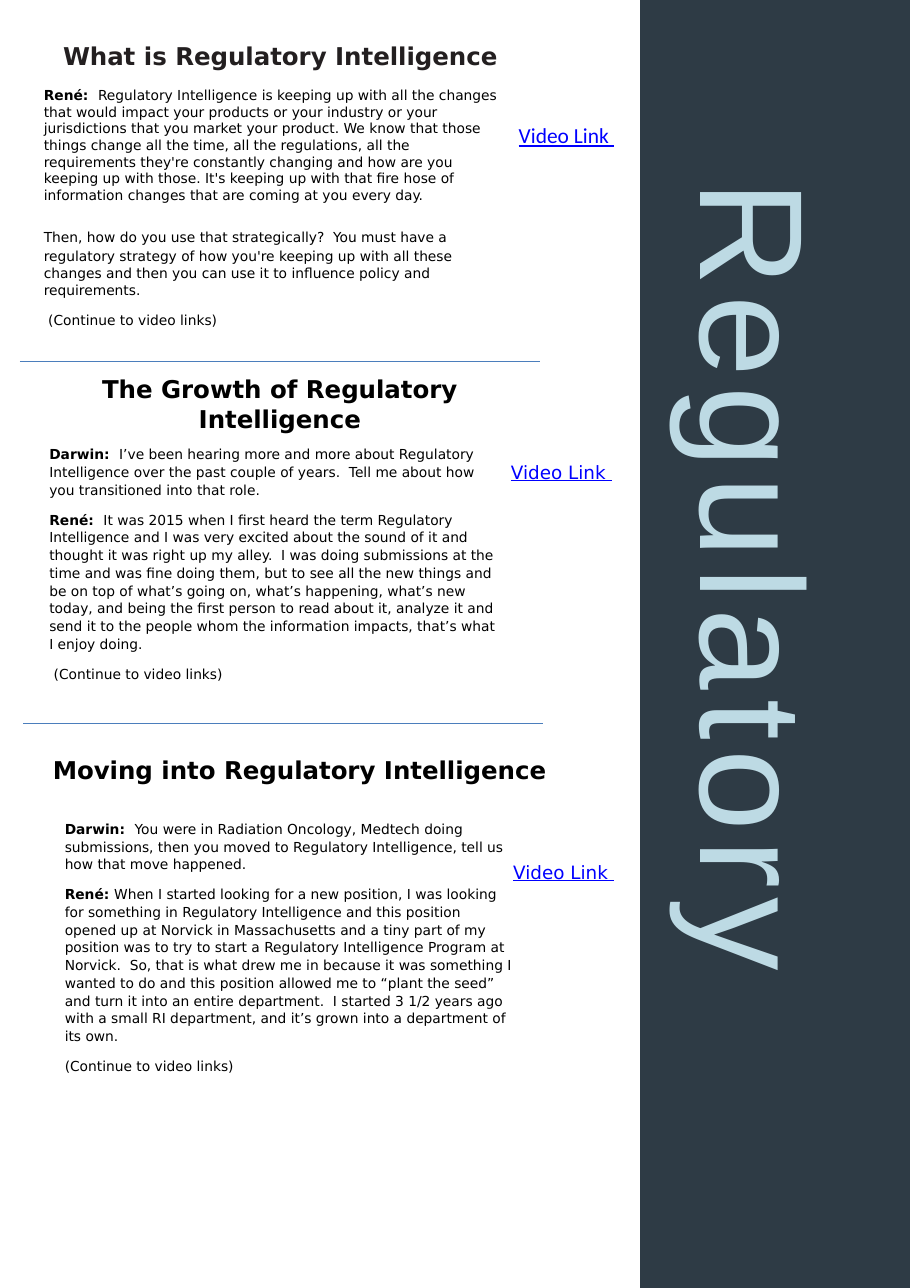
import pptx
import pptx.util
import pptx.dml.color
import pptx.enum.shapes
import pptx.enum.text
from dataclasses import dataclass

Pt = pptx.util.Pt
Align = pptx.enum.text.PP_ALIGN


@dataclass(frozen=True)
class Theme:
    font: str = "DejaVu Sans"
    side_font: str = "Arial"
    ink: str = "000000"
    dark: str = "231F20"
    band: str = "2E3B45"
    pale: str = "BDDAE4"
    link: str = "0000FF"
    rule: str = "4B7EBC"
    title: int = 16
    body: int = 9
    gap: int = 18
    side: int = 96


THEME = Theme()
WIDE, HIGH = pptx.util.Inches(8.26), pptx.util.Inches(11.69)
PANEL = 70.34  # width of the article column, percent of the slide
ROW = 28.1     # height of an article, percent of the slide


def color(code):
    return pptx.dml.color.RGBColor.from_string(code)


def inside(box, part):
    """Turn percent shares of a box into a box on the slide."""
    x, y, w, h = box
    left, top, width, height = (n / 100 for n in part)
    return [round(n) for n in (x + w * left, y + h * top, w * width, h * height)]


def style(para, size, code, font=THEME.font, bold=None):
    para.font.size, para.font.name = Pt(size), font
    para.font.bold = bold
    para.font.color.rgb = color(code)


def frame(slide, box, inset=None):
    text = slide.shapes.add_textbox(*box).text_frame
    text.word_wrap = True
    if inset is not None:
        text.margin_left = text.margin_right = inset
        text.margin_top = text.margin_bottom = inset
    return text


def heading(slide, box, words, code=THEME.ink, inset=None, lead=None):
    para = frame(slide, box, inset).paragraphs[0]
    para.text = words
    para.alignment = Align.CENTER
    para.line_spacing = lead
    style(para, THEME.title, code, bold=True)


def speech(slide, box, talk):
    """Each paragraph is its line spacing, the speaker and the runs."""
    text = frame(slide, box)
    for i, (lead, name, *parts) in enumerate(talk):
        para = text.add_paragraph() if i else text.paragraphs[0]
        para.line_spacing, para.space_after = lead, Pt(8)
        style(para, THEME.body, THEME.ink)
        if name:
            run = para.add_run()
            run.text, run.font.bold = name, True
        for part in parts:
            run = para.add_run()
            run.text = part
            if part == " ":
                run.font.size = Pt(THEME.gap)


def video(slide, box, size, font):
    para = frame(slide, box).paragraphs[0]
    para.text = "Video Link "
    style(para, size, THEME.link, font)
    para.font.underline = True


def divider(slide, box, start, end):
    x, y, w, _ = inside(box, (start, 0, end - start, 0))
    line = slide.shapes.add_connector(
        pptx.enum.shapes.MSO_CONNECTOR.STRAIGHT, x, y, x + w, y)
    line.line.color.rgb, line.line.width = color(THEME.rule), Pt(0.75)
    props = line._element.spPr
    props.append(props.makeelement(pptx.oxml.ns.qn("a:effectLst"), {}))


def article(slide, box, item):
    if "rule" in item:
        divider(slide, box, *item["rule"])
    heading(slide, inside(box, item["head"]), item["title"], **item.get("look", {}))
    speech(slide, inside(box, item["body"]), item["talk"])
    video(slide, inside(box, item["link"]), *item.get("face", (12, THEME.font)))


def sidebar(slide, box):
    band = slide.shapes.add_shape(pptx.enum.shapes.MSO_SHAPE.RECTANGLE, *box)
    band.shadow.inherit = False
    band.fill.solid()
    band.fill.fore_color.rgb = color(THEME.band)
    band.line.fill.background()
    # Word reading downwards
    text = frame(slide, inside(box, (19.1, 14.03, 74.39, 72.03)), 0)
    text._txBody.bodyPr.set("vert", "vert")
    para = text.paragraphs[0]
    para.line_spacing = Pt(144.7)
    style(para, THEME.side, THEME.pale, THEME.side_font)
    run = para.add_run()
    run.text = "Regulatory"
    run.font._element.set("spc", "580")


ARTICLES = [
    dict(
        title="What is Regulatory Intelligence",
        look=dict(code=THEME.dark, inset=0, lead=1.11),
        head=(6.02, 10.35, 75.56, 8.52),
        body=(5.16, 22.53, 75.22, 70.02),
        link=(79.35, 32.27, 22.89, 10.35),
        face=(14, "Calibri"),
        talk=[
            (None, "René:  ", "Regulatory Intelligence is keeping up with all the changes that would "
             "impact your products or your industry or your jurisdictions that you market your product. "
             "We know that those things change all the time, all the regulations, all the requirements "
             "they're constantly changing and how are you keeping up with those. It's keeping up with "
             "that fire hose of information changes that are coming at you every day."),
            (None, "", "Then, how do you use that strategically?", " ", "You must have a regulatory "
             "strategy of how you're keeping up with all these changes and then you can use it to "
             "influence policy and requirements."),
            (1.07, "", " (Continue to video links)"),
        ]),
    dict(
        title="The Growth of Regulatory Intelligence",
        rule=(3.1, 84.34),
        head=(2.58, 1.98, 82.27, 19.48),
        body=(6.02, 21.46, 73.32, 93.76),
        link=(78.14, 26.03, 22.89, 9.13),
        talk=[
            (1.07, "Darwin:  ", "I’ve been hearing more and more about Regulatory Intelligence over the "
             "past couple of years.  Tell me about how you transitioned into that role."),
            (1.07, "René:  ", "It was 2015 when I first heard the term Regulatory Intelligence and I was "
             "very excited about the sound of it and thought it was right up my alley.  I was doing "
             "submissions at the time and was fine doing them, but to see all the new things and be on "
             "top of what’s going on, what’s happening, what’s new today, and being the first person to "
             "read about it, analyze it and send it to the people whom the information impacts, that’s "
             "what I enjoy doing."),
            (1.07, "", " (Continue to video links)"),
        ]),
    dict(
        title="Moving into Regulatory Intelligence",
        rule=(3.61, 84.85),
        head=(5.68, 7, 82.27, 11.26),
        body=(8.43, 24.96, 73.32, 90.41),
        link=(78.49, 36.53, 22.89, 9.13),
        talk=[
            (1.07, "Darwin:  ", "You were in Radiation Oncology, Medtech doing submissions, then you "
             "moved to Regulatory Intelligence, tell us how that move happened."),
            (1.07, "René: ", "When I started looking for a new position, I was looking for something in "
             "Regulatory Intelligence and this position opened up at Norvick in Massachusetts and a tiny "
             "part of my position was to try to start a Regulatory Intelligence Program at Norvick.  So, "
             "that is what drew me in because it was something I wanted to do and this position allowed "
             "me to “plant the seed” and turn it into an entire department.  I started 3 1/2 years ago "
             "with a small RI department, and it’s grown into a department of its own."),
            (1.07, "", "(Continue to video links)"),
        ]),
]


def main():
    deck = pptx.Presentation()
    deck.slide_width, deck.slide_height = WIDE, HIGH
    slide = deck.slides.add_slide(deck.slide_layouts[6])
    page = (0, 0, WIDE, HIGH)
    sidebar(slide, inside(page, (PANEL, 0, 100 - PANEL, 100)))
    for i, item in enumerate(ARTICLES):
        article(slide, inside(page, (0, i * ROW, PANEL, ROW)), item)
    deck.save("out.pptx")


if __name__ == "__main__":
    main()
